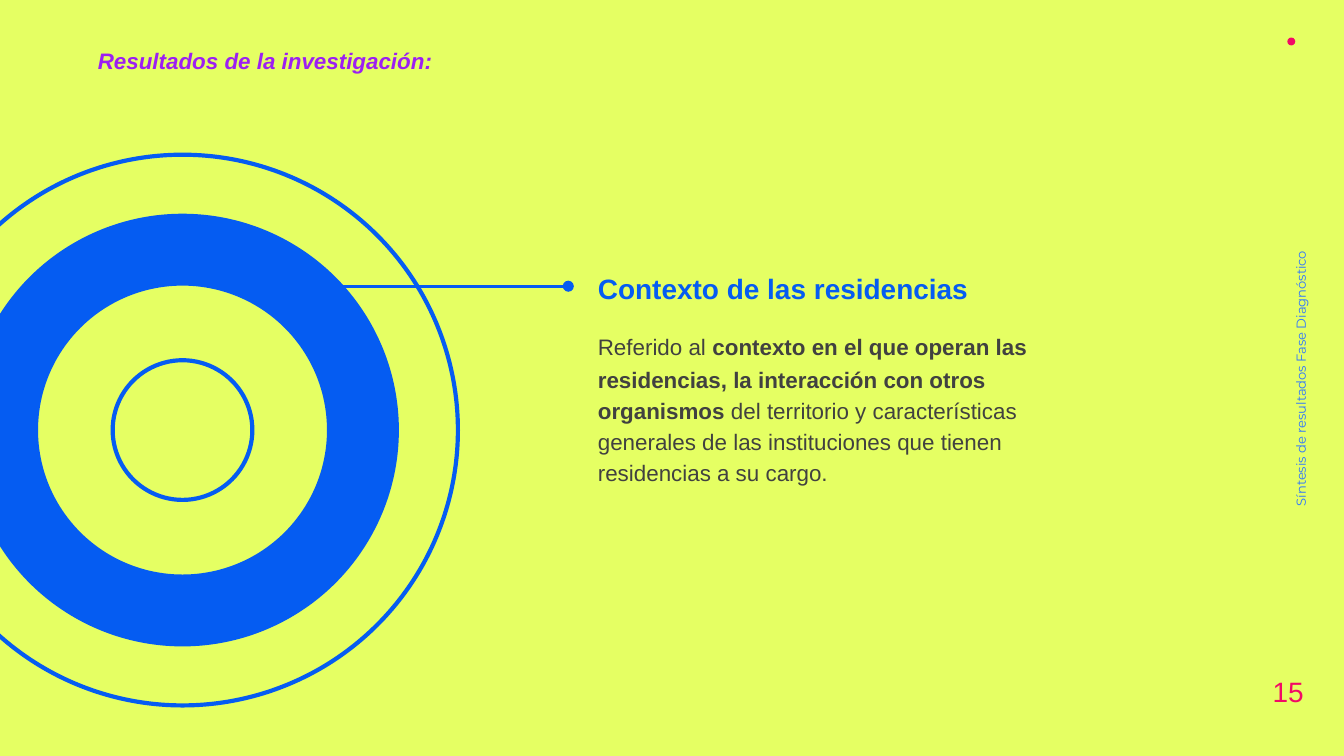
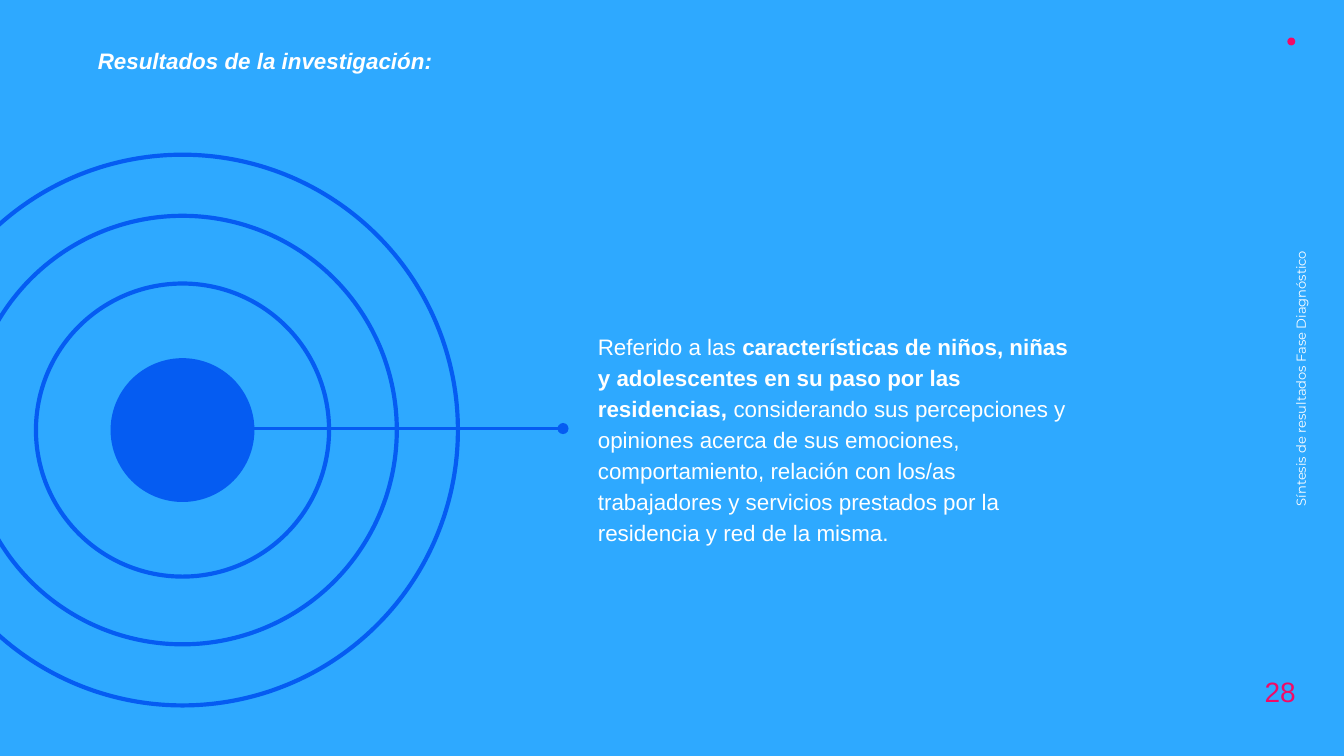
"""Two section slides with concentric rings, a pointer line and a description."""
from lxml import etree
from pptx import Presentation
from pptx.dml.color import RGBColor
from pptx.enum import shapes, text
from pptx.oxml import ns
from pptx.util import Cm, Pt

BLUE, PINK, WHITE = "055CF2", "F20A66", "FFFFFF"
YELLOW, SKY = "E5FF63", "2EA9FF"
CENTRE_X, CENTRE_Y = 3.45, 8.13
DIAMETERS = [10.41, 8.1, 5.54, 2.64]

SLIDES = [
    {
        "background": YELLOW, "title": "9C1FF2", "side": "2E75FF", "body": "414140",
        "number": "15", "number_left": 24.05, "number_width": 0.61,
        "rings": [YELLOW, BLUE, YELLOW, YELLOW], "pointer": (6.43, 10.74, 5.41),
        "heading": "Contexto de las residencias",
        "text": [
            [("Referido al ", False), ("contexto en el que operan las", True)],
            [("residencias, la interacción con otros organismos", True),
             (" del territorio y características generales de las instituciones "
              "que tienen residencias a su cargo.", False)],
        ],
    },
    {
        "background": SKY, "title": WHITE, "side": WHITE, "body": WHITE,
        "number": "28", "number_left": 23.9, "number_width": 0.76,
        "rings": [SKY, SKY, SKY, BLUE], "pointer": (4.19, 10.64, 8.1),
        "heading": None,
        "text": [
            [("Referido a las ", False),
             ("características de niños, niñas y adolescentes en su paso por las residencias, ", True),
             ("considerando sus percepciones y opiniones acerca de sus emociones, "
              "comportamiento, relación con los/as trabajadores y servicios prestados "
              "por la residencia y red de la misma.", False)],
        ],
    },
]


def rgb(value):
    return RGBColor.from_string(value)


def add_text(page, place, paragraphs, size, colour, font="Arial", spacing=1.0, inset=0.0, top_inset=0.0):
    box = page.shapes.add_textbox(*[Cm(length) for length in place])
    frame = box.text_frame
    frame.word_wrap = True
    frame.margin_left = frame.margin_right = frame.margin_bottom = Cm(inset)
    frame.margin_top = Cm(top_inset)
    for index, runs in enumerate(paragraphs):
        para = frame.add_paragraph() if index else frame.paragraphs[0]
        para.line_spacing = spacing
        if index:
            para.space_before = Pt(1)
        for words, bold in runs:
            span = para.add_run()
            span.text = words
            span.font.size, span.font.name, span.font.bold = Pt(size), font, bold
            span.font.color.rgb = rgb(colour)
    return box


deck = Presentation()
deck.slide_width, deck.slide_height = Cm(25.4), Cm(14.29)

for slide in SLIDES:
    page = deck.slides.add_slide(deck.slide_layouts[6])
    page.background.fill.solid()
    page.background.fill.fore_color.rgb = rgb(slide["background"])

    side = add_text(page, (21.44, 7.04, 6.1, 0.23),
                    [[("Síntesis de resultados Fase Diagnóstico", False)]],
                    7, slide["side"], font="Montserrat", spacing=1.2)
    side.rotation = 270
    side.text_frame.paragraphs[0].alignment = text.PP_ALIGN.CENTER

    title = add_text(page, (1.6, 0.64, 8.97, 1.09), [[("Resultados de la investigación:", True)]],
                     12, slide["title"], inset=0.25, top_inset=0.25)
    title.text_frame.paragraphs[0].runs[0].font.italic = True

    add_text(page, (slide["number_left"], 12.73, slide["number_width"], 0.66),
             [[(slide["number"], False)]], 15, PINK, top_inset=0.03)

    dot = page.shapes.add_shape(shapes.MSO_SHAPE.OVAL, Cm(24.33), Cm(0.71), Cm(0.15), Cm(0.15))
    dot.shadow.inherit = False
    dot.fill.solid()
    dot.fill.fore_color.rgb = rgb(PINK)
    dot.line.fill.background()

    for diameter, fill in zip(DIAMETERS, slide["rings"]):
        ring = page.shapes.add_shape(
            shapes.MSO_SHAPE.OVAL, Cm(CENTRE_X - diameter / 2), Cm(CENTRE_Y - diameter / 2),
            Cm(diameter), Cm(diameter))
        ring.shadow.inherit = False
        ring.fill.solid()
        ring.fill.fore_color.rgb = rgb(fill)
        ring.line.color.rgb = rgb(BLUE)
        ring.line.width = Pt(2.25)

    add_text(page, (11.3, 6.15, 8.97, 2.26), slide["text"], 12, slide["body"],
             spacing=1.15, top_inset=0.08)

    start, end, height = slide["pointer"]
    pointer = page.shapes.add_connector(
        shapes.MSO_CONNECTOR.STRAIGHT, Cm(start), Cm(height), Cm(end), Cm(height))
    pointer.line.color.rgb = rgb(BLUE)
    pointer.line.width = Pt(1.5)
    etree.SubElement(pointer.line._get_or_add_ln(), ns.qn("a:tailEnd"), type="oval")
    etree.SubElement(pointer._element.spPr, ns.qn("a:effectLst"))

    if slide["heading"]:
        heading = add_text(page, (11.3, 5.0, 7.54, 0.74), [[(slide["heading"], True)]],
                           15, BLUE, spacing=1.15, top_inset=0.08)
        heading.text_frame.vertical_anchor = text.MSO_ANCHOR.MIDDLE

deck.save("out.pptx")
